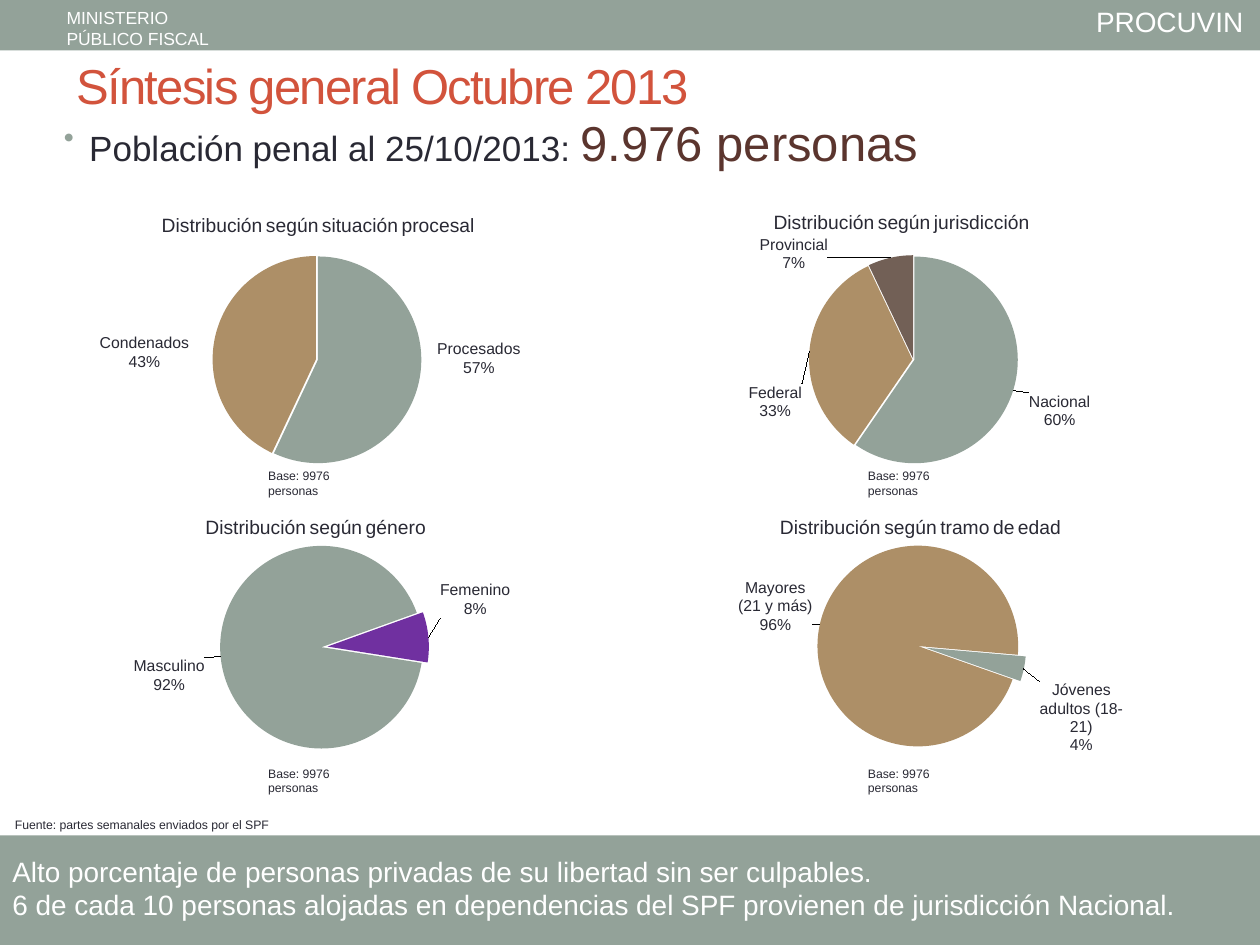
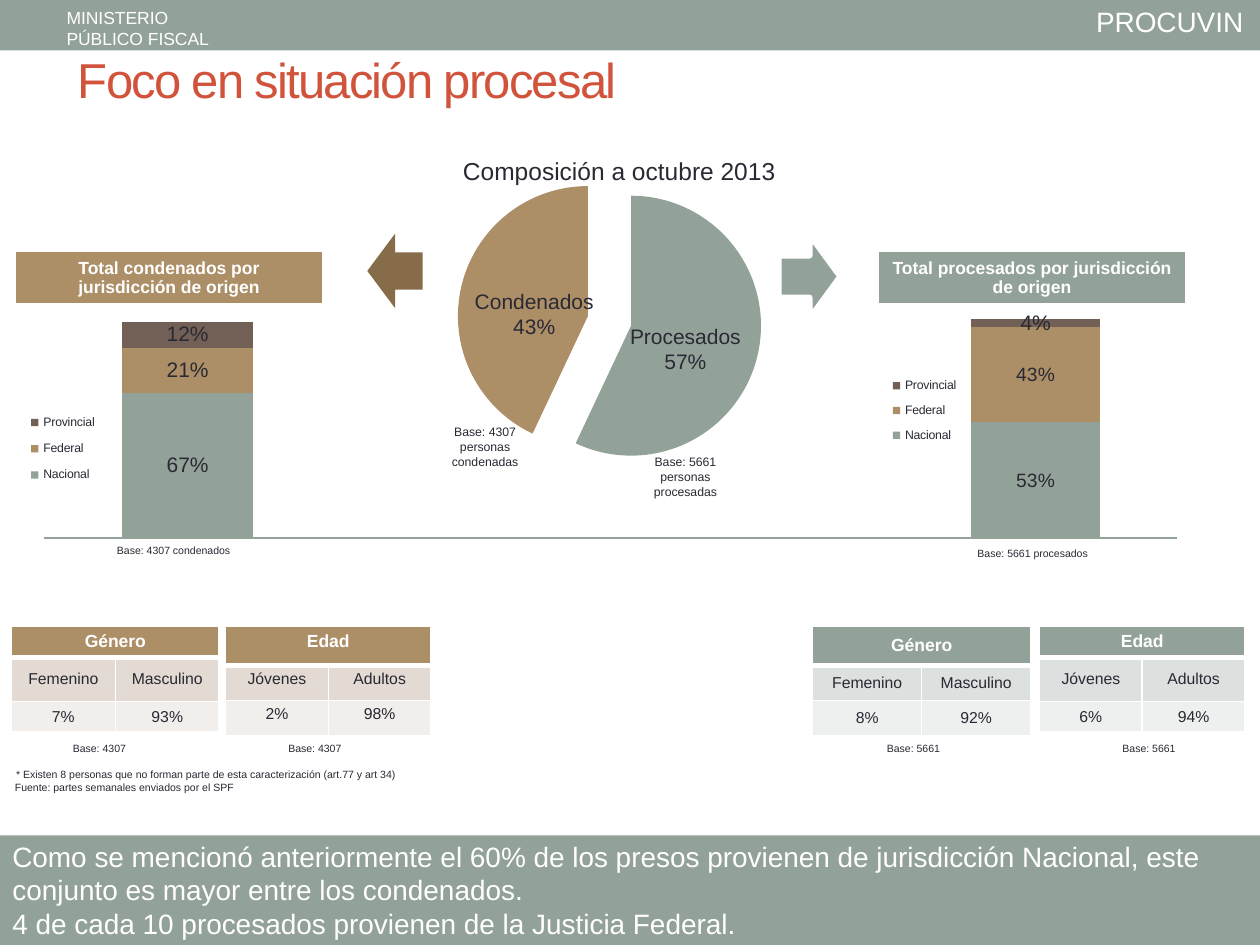
from pptx import Presentation
from pptx.chart.data import CategoryChartData
from pptx.dml.color import RGBColor
from pptx.enum.chart import XL_CHART_TYPE, XL_LABEL_POSITION, XL_LEGEND_POSITION
from pptx.enum.shapes import MSO_CONNECTOR, MSO_SHAPE
from pptx.enum.text import MSO_ANCHOR, PP_ALIGN
from pptx.oxml.ns import qn
from pptx.oxml.xmlchemy import OxmlElement
from pptx.util import Inches, Pt

PIE = XL_CHART_TYPE.PIE
STACKED = XL_CHART_TYPE.COLUMN_STACKED_100
OUTSIDE = XL_LABEL_POSITION.OUTSIDE_END
LEGEND_RIGHT = XL_LEGEND_POSITION.RIGHT
RECTANGLE = MSO_SHAPE.RECTANGLE
DOWN_ARROW = MSO_SHAPE.DOWN_ARROW
STRAIGHT = MSO_CONNECTOR.STRAIGHT
TOP, MIDDLE = MSO_ANCHOR.TOP, MSO_ANCHOR.MIDDLE
LEFT, CENTER = PP_ALIGN.LEFT, PP_ALIGN.CENTER

FONT = "Arial"
WHITE = RGBColor(0xFF, 0xFF, 0xFF)
INK = RGBColor(0x29, 0x29, 0x34)
RED = RGBColor(0xD2, 0x53, 0x3C)
MAROON = RGBColor(0x5B, 0x35, 0x2E)
GREEN = RGBColor(0x93, 0xA2, 0x99)
TAN = RGBColor(0xAD, 0x8F, 0x67)
BROWN = RGBColor(0x72, 0x60, 0x56)
DARK_TAN = RGBColor(0x86, 0x6C, 0x49)
PURPLE = RGBColor(0x70, 0x30, 0xA0)
TAN_TINTS = (RGBColor(0xE3, 0xDB, 0xD3), RGBColor(0xF1, 0xEE, 0xEB))
GREEN_TINTS = (RGBColor(0xDC, 0xE0, 0xDE), RGBColor(0xEE, 0xF0, 0xEF))

SOURCE = "Fuente: partes semanales enviados por el SPF"


def element(tag, *children, **attributes):
    node = OxmlElement(tag)
    for name, value in attributes.items():
        node.set(name, str(value))
    node.extend(children)
    return node


def manual_layout(target=None, edges=False, **fractions):
    """Chart layout; without edges the fractions are offsets from the default place."""
    manual = element("c:manualLayout")
    if target:
        manual.append(element("c:layoutTarget", val=target))
    if edges:
        manual.extend([element("c:xMode", val="edge"), element("c:yMode", val="edge")])
    manual.extend([element(f"c:{key}", val=value) for key, value in fractions.items()])
    return element("c:layout", manual)


def style_font(font, size, color=INK, bold=None):
    font.name, font.size, font.bold = FONT, Pt(size), bold
    font.color.rgb = color


class Report:
    """Holds the deck, the page being built and the shared style."""

    def __init__(self):
        self.deck = Presentation()
        self.deck.slide_width, self.deck.slide_height = Inches(10), Inches(7.5)
        self.page = None

    def start_page(self, title, title_left, title_top):
        self.page = self.deck.slides.add_slide(self.deck.slide_layouts[6])
        self.shape(RECTANGLE, 0, 0, 10, 0.4, GREEN)
        self.text("PROCUVIN", 8.6, -0.01, 1.38, 0.37, 16, WHITE)
        self.text("MINISTERIO\nPÚBLICO FISCAL", 0.43, 0.01, 1.34, 0.44, 10, WHITE)
        box = self.text(title, title_left, title_top, 9, 1.25, 28, RED, anchor=MIDDLE)
        for span in box.text_frame.paragraphs[0].runs:
            span.font._element.set("spc", "-100")

    def footer(self, message, top, height):
        self.shape(RECTANGLE, 0, 6.63, 10, 0.87, GREEN)
        self.text(message, 0, top, 10, height, 16, WHITE)

    def shape(self, kind, left, top, width, height, fill, rotation=0, outline=None):
        shape = self.page.shapes.add_shape(
            kind, Inches(left), Inches(top), Inches(width), Inches(height))
        shape.shadow.inherit = False
        shape.rotation = rotation
        shape.fill.solid()
        shape.fill.fore_color.rgb = fill
        if outline:
            shape.line.color.rgb, shape.line.width = WHITE, Pt(outline)
        else:
            shape.line.fill.background()

    def text(self, content, left, top, width, height, size, color=INK,
             align=LEFT, anchor=TOP, wrap=True):
        box = self.page.shapes.add_textbox(
            Inches(left), Inches(top), Inches(width), Inches(height))
        frame = box.text_frame
        frame.word_wrap, frame.vertical_anchor = wrap, anchor
        frame.text = content
        for para in frame.paragraphs:
            para.alignment = align
            for span in para.runs:
                style_font(span.font, size, color)
        return box

    def chart_heading(self, content, left, top, width):
        """Centred heading whose word gaps are set in a smaller size."""
        box = self.text("", left, top, width, 0.29, 11, align=CENTER, wrap=False)
        para = box.text_frame.paragraphs[0]
        for index, word in enumerate(content.split()):
            for piece, size in ((" ", 7), (word, 11))[0 if index else 1:]:
                span = para.add_run()
                span.text = piece
                style_font(span.font, size)

    def bullet(self, spans, left, top, width, height):
        box = self.text("", left, top, width, height, 20)
        para = box.text_frame.paragraphs[0]
        properties = para._p.get_or_add_pPr()
        properties.set("marL", str(Inches(0.2)))
        properties.set("indent", str(-Inches(0.2)))
        properties.extend([
            element("a:buClr", element("a:srgbClr", val=GREEN)),
            element("a:buSzPct", val=85000),
            element("a:buChar", char="•")])
        for content, size, color in spans:
            span = para.add_run()
            span.text = content
            style_font(span.font, size, color)

    def line(self, left, right, y):
        line = self.page.shapes.add_connector(
            STRAIGHT, Inches(left), Inches(y), Inches(right), Inches(y))
        line.line.color.rgb, line.line.width = GREEN, Pt(0.75)
        line._element.spPr.append(element("a:effectLst"))

    def chart(self, kind, place, categories, series, plot_place):
        data = CategoryChartData()
        data.categories = categories
        for name, values in series:
            data.add_series(name, values)
        chart = self.page.shapes.add_chart(kind, *map(Inches, place), data).chart
        chart.has_title = chart.has_legend = False
        style_font(chart.font, 18)
        chart.plots[0].vary_by_categories = kind == PIE
        area = next(chart.element.iter(qn("c:plotArea")))
        for layout in area.findall(qn("c:layout")):
            area.remove(layout)
        area.insert(0, manual_layout("inner", True, **dict(zip("xywh", plot_place))))
        return chart

    def pie(self, place, slices, explosion, start=0, plot_place=(0.271, 0.246, 0.479, 0.57),
            offsets=(), custom=None):
        """Slices are (category, value, colour); offsets move each outside label."""
        names, values, colors = zip(*slices)
        chart = self.chart(PIE, place, names, [("Series 1", values)], plot_place)
        next(chart.element.iter(qn("c:tx"))).addnext(element("c:explosion", val=explosion))
        pie = next(chart.element.iter(qn("c:pieChart")))
        for angle in pie.findall(qn("c:firstSliceAng")):
            pie.remove(angle)
        pie.append(element("c:firstSliceAng", val=start))
        points = chart.plots[0].series[0].points
        for index, color in enumerate(colors):
            fill = points[index].format.fill
            fill.solid()
            fill.fore_color.rgb = color
        if offsets:
            self.pie_labels(chart, offsets, custom or {})

    def pie_labels(self, chart, offsets, custom):
        series = chart.plots[0].series[0]
        style_font(series.data_labels.font, 9)
        for index in range(len(offsets)):
            label = series.points[index].data_label
            if index in custom:
                label.text_frame.text = custom[index]
                for para in label.text_frame.paragraphs:
                    style_font(para.runs[0].font, 9)
            else:
                style_font(label.font, 9)
            label.position = OUTSIDE
        flags = {"c:showVal": 0, "c:showCatName": 1, "c:showPercent": 1}
        for label, (x, y) in zip(chart.element.iter(qn("c:dLbl")), offsets):
            label.find(qn("c:idx")).addnext(manual_layout(x=x, y=y))
            for tag, shown in flags.items():
                label.find(qn(tag)).set("val", str(shown))
            separator = element("c:separator")
            separator.text = "\n"
            label.find(qn("c:showBubbleSize")).addnext(separator)

    def stacked_column(self, place, values, label_sizes, plot_height, legend_place):
        names = ("Nacional", "Federal", "Provincial")
        chart = self.chart(STACKED, place, ["1"], [(n, [v]) for n, v in zip(names, values)],
                           (0, 0.028, 0.975, plot_height))
        chart.plots[0].gap_width, chart.plots[0].overlap = 202, 100
        for axis in (chart.category_axis, chart.value_axis):
            axis.visible = axis.has_major_gridlines = False
        for series, color, size in zip(chart.plots[0].series, (GREEN, TAN, BROWN), label_sizes):
            series.format.fill.solid()
            series.format.fill.fore_color.rgb = color
            labels = series.data_labels
            labels.show_value = True
            labels.number_format, labels.number_format_is_linked = '0"%"', False
            style_font(labels.font, size)
        chart.has_legend = True
        chart.legend.position, chart.legend.include_in_layout = LEGEND_RIGHT, False
        style_font(chart.legend.font, 7)
        next(chart.element.iter(qn("c:legendPos"))).addnext(
            manual_layout(edges=True, **dict(zip("xywh", legend_place))))

    def table(self, left, top, width, row_heights, rows, fills, anchor=MIDDLE):
        """A first row with one text spans all columns."""
        columns = len(rows[-1])
        table = self.page.shapes.add_table(
            len(rows), columns, Inches(left), Inches(top), Inches(width),
            Inches(sum(row_heights))).table
        table.horz_banding = False
        for column in table.columns:
            column.width = Inches(width / columns)
        if columns > 1:
            table.cell(0, 0).merge(table.cell(0, columns - 1))
        for r, (height, texts, fill) in enumerate(zip(row_heights, rows, fills)):
            table.rows[r].height = Inches(height)
            for c in range(columns):
                cell = table.cell(r, c)
                cell.vertical_anchor = anchor
                cell.margin_top = cell.margin_bottom = Inches(0.04)
                cell.fill.solid()
                cell.fill.fore_color.rgb = fill
                self.cell_borders(cell, 1 if r else 3)
                if c < len(texts):
                    para = cell.text_frame.paragraphs[0]
                    para.text, para.alignment = texts[c], CENTER
                    style_font(para.runs[0].font, 9 if r else 10, INK if r else WHITE, r == 0)

    def cell_borders(self, cell, bottom_width):
        properties = cell._tc.get_or_add_tcPr()
        for index, (side, width) in enumerate(zip("LRTB", (1, 1, 1, bottom_width))):
            fill = element("a:solidFill", element("a:srgbClr", val=WHITE))
            properties.insert(index, element(f"a:ln{side}", fill, w=Pt(width)))


def build_overview(report):
    report.start_page("Síntesis general Octubre 2013", 0.51, 0.05)
    report.bullet([("Población penal al 25/10/2013: ", 20, INK), ("9.976 personas", 28, MAROON)],
                  0.41, 0.84, 9, 0.7)
    size = (3.46, 2.91)
    report.pie((0.75, 1.31, *size), [("1", 57, GREEN), ("2", 43, TAN)], 1)
    report.pie((5.47, 1.31, *size),
               [("Nacional", 59, GREEN), ("Federal", 33, TAN), ("Provincial", 7, BROWN)], 1,
               plot_place=(0.275, 0.246, 0.479, 0.57),
               offsets=[(0.02, 0), (0, 0.14), (-0.14, 0.06)])
    report.pie((0.81, 3.59, *size), [("Masculino", 92, GREEN), ("Femenino", 8, PURPLE)], 3, 99,
               offsets=[(-0.02, 0), (0.01, -0.05)])
    report.pie((5.55, 3.59, *size),
               [("Jóvenes adultos (18-20)", 4, GREEN), ("Mayores (21 y más)", 96, TAN)], 4, 95,
               offsets=[(0.02, 0.03), (0, 0.03)], custom={0: "Jóvenes adultos (18-21)\n4%"})
    for left in (2.03, 6.79):
        for top in (3.67, 6.03):
            report.text("Base: 9976 personas", left, top, 1.02, 0.22, 7)
    for heading, left, top, width in (
            ("situación procesal", 1.17, 1.64, 2.71), ("género", 1.52, 4.04, 1.97),
            ("jurisdicción", 6.02, 1.62, 2.27), ("tramo de edad", 6.08, 4.04, 2.45)):
        report.chart_heading(f"Distribución según {heading}", left, top, width)
    report.text("Condenados 43%", 0.67, 2.59, 0.95, 0.4, 9, align=CENTER)
    report.text("Procesados 57%", 3.31, 2.64, 0.98, 0.4, 9, align=CENTER)
    report.text(SOURCE, 0.02, 6.44, 2.25, 0.22, 7)
    report.footer("Alto porcentaje de personas privadas de su libertad sin ser culpables.\n"
                  "6 de cada 10 personas alojadas en dependencias del SPF provienen de "
                  "jurisdicción Nacional.", 6.73, 0.64)


def build_focus(report):
    report.start_page("Foco en situación procesal", 0.52, 0)
    report.stacked_column((-0.08, 2.49, 3.22, 2.28), (67, 21, 12), (12, 12, 12), 0.753,
                          (0.08, 0.31, 0.2, 0.32))
    report.stacked_column((6.67, 2.47, 3.18, 2.13), (53, 43, 4), (11, 11, 12), 0.82,
                          (0.11, 0.21, 0.2, 0.32))
    report.pie((2.8, 0.84, 4.8, 3.61), [("1", 57, GREEN), ("2", 43, TAN)], 17,
               plot_place=(0.173, 0.138, 0.503, 0.67))
    for content, left, top, width, height, size in (
            ("Composición a octubre 2013", 3.57, 1.19, 2.69, 0.34, 14),
            ("Condenados 43%", 3.65, 2.24, 1.18, 0.5, 12),
            ("Procesados 57%", 4.83, 2.52, 1.22, 0.5, 12),
            ("Base: 4307 personas condenadas", 3.43, 3.32, 0.84, 0.45, 7),
            ("Base: 5661 personas procesadas", 4.9, 3.56, 1.08, 0.45, 7)):
        report.text(content, left, top, width, height, size, align=CENTER)
    report.shape(DOWN_ARROW, 2.84, 1.93, 0.59, 0.44, DARK_TAN, rotation=90)
    report.shape(DOWN_ARROW, 6.09, 1.95, 0.67, 0.49, GREEN, rotation=270, outline=3.5)
    for group, left, fill in (("condenados", 0.12, TAN), ("procesados", 6.97, GREEN)):
        report.table(left, 1.99, 2.44, [0.43], [[f"Total {group} por jurisdicción de origen"]], [fill])
    tan, green = (TAN, *TAN_TINTS), (GREEN, *GREEN_TINTS)
    gender, age = ("Femenino", "Masculino"), ("Jóvenes", "Adultos")
    low, high = (0.24, 0.35, 0.24), (0.31, 0.28, 0.28)
    for title, names, shares, left, width, heights, fills, anchor in (
            ("Género", gender, ("7%", "93%"), 0.09, 1.65, low, tan, MIDDLE),
            ("Edad", age, ("2%", "98%"), 1.79, 1.63, high, tan, TOP),
            ("Género", gender, ("8%", "92%"), 6.45, 1.73, high, green, MIDDLE),
            ("Edad", age, ("6%", "94%"), 8.25, 1.63, low, green, MIDDLE)):
        report.table(left, 4.97, width, heights, [[title], names, shares], fills, anchor)
    for content, left, top, width in (
            ("Base: 4307 condenados", 0.83, 4.27, 1.32), ("Base: 5661 procesados", 7.66, 4.29, 1.36),
            ("Base: 4307", 0.48, 5.84, 0.84), ("Base: 4307", 2.19, 5.84, 0.84),
            ("Base: 5661", 6.94, 5.84, 1.08), ("Base: 5661", 8.81, 5.84, 1.08),
            ("* Existen 8 personas que no forman parte de esta caracterización (art.77 y art 34)",
             0.03, 6.05, 3.27), (SOURCE, 0.02, 6.15, 1.96)):
        report.text(content, left, top, width, 0.2, 6)
    report.line(0.35, 9.34, 4.27)
    report.footer("Como se mencionó anteriormente el 60% de los presos provienen de jurisdicción "
                  "Nacional, este conjunto es mayor entre los condenados.\n"
                  "4 de cada 10 procesados provienen de la Justicia Federal.", 6.61, 0.91)


def main():
    report = Report()
    build_overview(report)
    build_focus(report)
    report.deck.save("out.pptx")


if __name__ == "__main__":
    main()
